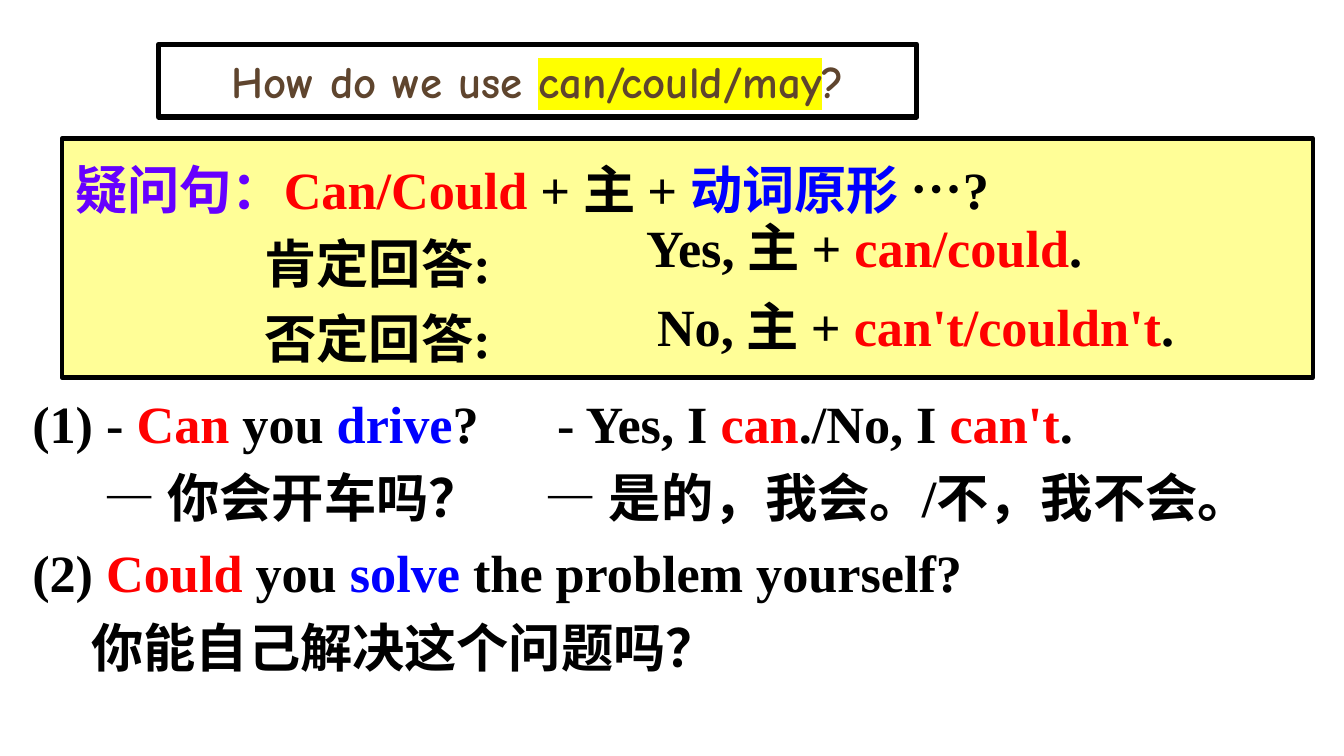
from dataclasses import dataclass

from lxml import etree
from pptx import Presentation, util as u
from pptx.dml.color import RGBColor
from pptx.enum import shapes, text
from pptx.oxml import ns

BLACK = RGBColor(0, 0, 0)
RED = RGBColor(0xFF, 0, 0)
BLUE = RGBColor(0, 0, 0xFF)
PURPLE = RGBColor(0x66, 0, 0xFF)
BROWN = RGBColor(0x5F, 0x45, 0x2E)
CREAM = RGBColor(0xFF, 0xFE, 0x97)
YELLOW = RGBColor(0xFF, 0xFF, 0)


@dataclass
class Bit:
    words: str
    color: RGBColor = BLACK
    mark: RGBColor | None = None
    gap: int = 0  # extra letter spacing in points


@dataclass
class Line:
    bits: list[Bit]
    left: float = 0


def place(shape, x: float, y: float, w: float, h: float) -> None:
    shape.left, shape.top = u.Inches(x), u.Inches(y)
    shape.width, shape.height = u.Inches(w), u.Inches(h)


def border(shape, width: float) -> None:
    shape.line.color.rgb = BLACK
    shape.line.width = u.Pt(width)


def add_run(para, bit: Bit, face: str, size: float) -> None:
    run = para.add_run()
    run.text = bit.words
    font = run.font
    font.name, font.size, font.bold = face, u.Pt(size), True
    font.color.rgb = bit.color
    props = run._r.rPr
    if bit.gap:
        props.set("spc", str(bit.gap * 100))
    if bit.mark is not None:
        glow = etree.Element(ns.qn("a:highlight"))
        etree.SubElement(glow, ns.qn("a:srgbClr"), val=str(bit.mark))
        props.find(ns.qn("a:solidFill")).addnext(glow)


def write(shape, lines: list[Line], pitch: float | None = None,
          align=text.PP_ALIGN.LEFT, anchor=text.MSO_ANCHOR.TOP,
          face: str = "Times New Roman", size: float = 28) -> None:
    frame = shape.text_frame
    frame.word_wrap = True
    frame.auto_size = text.MSO_AUTO_SIZE.NONE
    frame.vertical_anchor = anchor
    for i, line in enumerate(lines):
        para = frame.paragraphs[0] if i == 0 else frame.add_paragraph()
        props = para._p.get_or_add_pPr()
        props.set("marL", str(u.Inches(line.left)))
        props.set("indent", "0")
        etree.SubElement(props, ns.qn("a:buNone"))
        para.alignment = align
        para.space_before = u.Pt(0)
        if pitch:
            para.line_spacing = u.Pt(pitch)
        for bit in line.bits:
            add_run(para, bit, face, size)


def main() -> None:
    deck = Presentation()
    deck.slide_width = u.Inches(10)
    deck.slide_height = deck.slide_width * 9 // 16
    slide = deck.slides.add_slide(deck.slide_layouts[1])

    # Title
    title = slide.shapes.title
    place(title, 1.18, 0.33, 5.64, 0.54)
    border(title, 3)
    write(title, [Line([Bit("How do we use ", BROWN),
                        Bit("can/could/may", BROWN, YELLOW),
                        Bit("?", BROWN)])],
          align=text.PP_ALIGN.CENTER, anchor=text.MSO_ANCHOR.MIDDLE,
          face="Comic Neue", size=24)

    # Examples
    body = slide.placeholders[1]
    place(body, 0.14, 2.77, 10.44, 2.34)
    write(body, [
        Line([Bit("(1) -"), Bit(" Can ", RED), Bit("you "),
              Bit("drive", BLUE), Bit("?"), Bit(" ", gap=35),
              Bit("- Yes, I "), Bit("can", RED), Bit("./No, I "),
              Bit("can't", RED), Bit(".")]),
        Line([Bit("— 你会开车吗？"), Bit(" ", gap=28),
              Bit("— 是的，我会。/不，我不会。")], left=0.53),
        Line([Bit("(2) "), Bit("Could ", RED), Bit("you "),
              Bit("solve ", BLUE), Bit("the problem yourself?")]),
        Line([Bit("你能自己解决这个问题吗？")], left=0.44),
    ], pitch=40)

    # Rule panel
    panel = slide.shapes.add_shape(shapes.MSO_SHAPE.RECTANGLE, 0, 0, 0, 0)
    place(panel, 0.46, 1.03, 9.31, 1.78)
    panel.shadow.inherit = False
    panel.fill.solid()
    panel.fill.fore_color.rgb = CREAM
    border(panel, 2.25)
    write(panel, [
        Line([Bit("疑问句：", PURPLE), Bit("Can/Could ", RED),
              Bit("+ 主 + "), Bit("动词原形 ", BLUE), Bit("…?")]),
        Line([Bit("肯定回答:")], left=1.41),
        Line([Bit("否定回答:")], left=1.41),
    ], pitch=40)

    # Short answers
    for x, y, w, start, verb in (
            (4.71, 1.55, 4.77, "Yes, 主 + ", "can/could"),
            (4.79, 2.14, 5.92, "No, 主 + ", "can't/couldn't")):
        reply = slide.shapes.add_textbox(0, 0, 0, 0)
        place(reply, x, y, w, 0.57)
        write(reply, [Line([Bit(start), Bit(verb, RED), Bit(".")])])

    deck.save("out.pptx")


if __name__ == "__main__":
    main()
